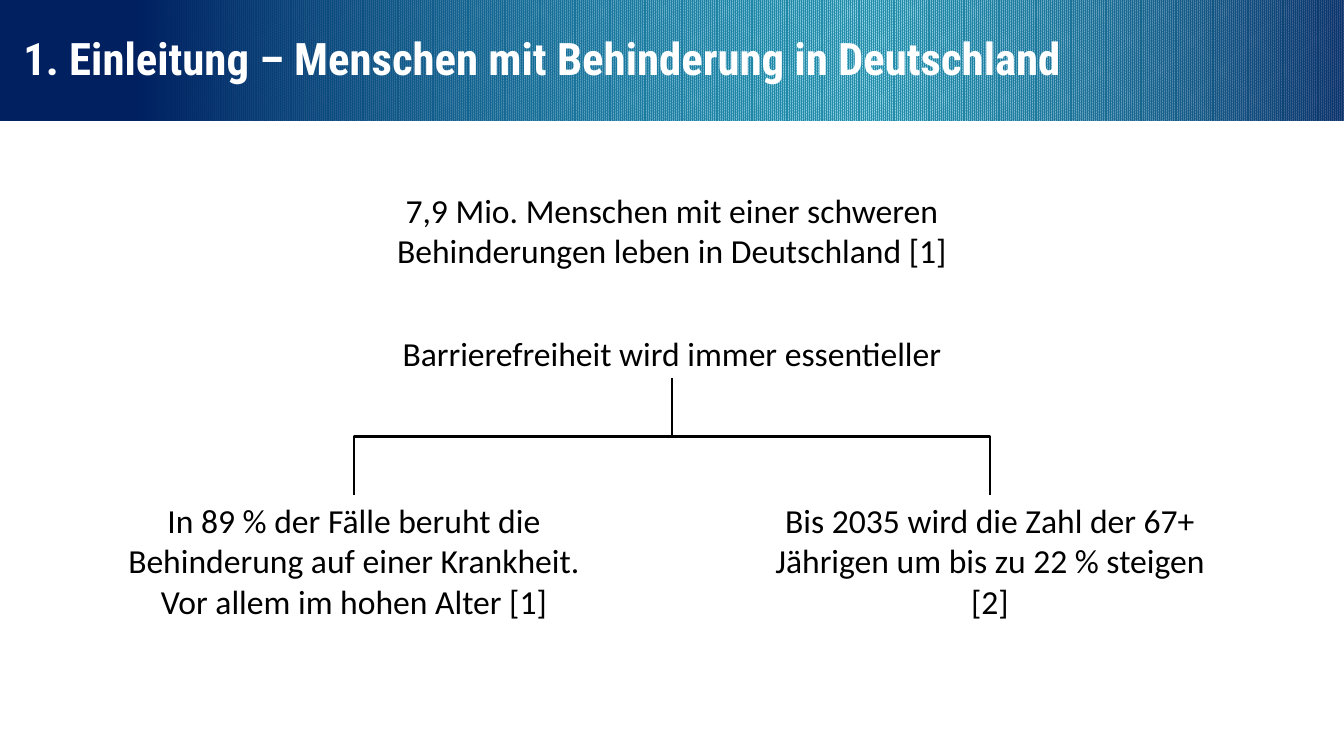
from dataclasses import dataclass

from lxml import etree
from pptx import Presentation
from pptx import util as u
from pptx.dml.color import RGBColor
from pptx.enum import dml, shapes, text
from pptx.oxml.ns import qn

BLACK = RGBColor(0x00, 0x00, 0x00)
WHITE = RGBColor(0xFF, 0xFF, 0xFF)
NAVY = RGBColor(0x00, 0x20, 0x60)
CYAN = RGBColor(0x17, 0xA5, 0xC7)
TEAL = RGBColor(0x2E, 0x7D, 0x96)

WIDTH, HEIGHT = u.Inches(13.33), u.Inches(7.5)
BANNER_HEIGHT = 16
BRANCH_OFFSET = 23.66  # distance of each branch from the slide's centre


@dataclass(frozen=True)
class Statement:
    """A centred text; places and sizes are percentages of the slide."""
    center: float
    top: float
    width: float
    height: float
    lines: tuple[str, ...]


@dataclass(frozen=True)
class Stop:
    position: int
    color: RGBColor
    opacity: int = 100


POPULATION = Statement(50, 24.4, 52.2, 12.13, (
    "7,9 Mio. Menschen mit einer schweren Behinderungen leben in Deutschland [1]",))
CONCLUSION = Statement(50, 43.33, 51.3, 6.73, (
    "Barrierefreiheit wird immer essentieller",))
REASONS = (
    Statement(50 - BRANCH_OFFSET, 65.47, 35.56, 17.47, (
        "In 89 % der Fälle beruht die Behinderung auf einer Krankheit.",
        "Vor allem im hohen Alter [1]")),
    Statement(50 + BRANCH_OFFSET, 65.47, 35.56, 17.47, (
        "Bis 2035 wird die Zahl der 67+ Jährigen um bis zu 22 % steigen [2]",)),
)
BANNER_STOPS = (Stop(10, NAVY), Stop(65, CYAN, 43), Stop(100, NAVY, 77))


def across(share: float) -> int:
    return round(WIDTH * share / 100)


def down(share: float) -> int:
    return round(HEIGHT * share / 100)


def add_span(para, words: str, font: str, size: int, color: RGBColor, bold=False) -> None:
    span = para.add_run()
    span.text = words
    span.font.name = font
    span.font.size = u.Pt(size)
    span.font.color.rgb = color
    span.font.bold = bold


def add_banner_layer(page):
    layer = page.shapes.add_shape(
        shapes.MSO_SHAPE.RECTANGLE, 0, 0, WIDTH, down(BANNER_HEIGHT))
    layer.shadow.inherit = False
    layer.line.fill.background()
    return layer


def set_gradient(shape, stops: tuple[Stop, ...]) -> None:
    shape.fill.gradient()
    shape.fill.gradient_angle = 0
    stop_list = shape.fill._xPr.find(qn("a:gradFill")).find(qn("a:gsLst"))
    for old_stop in list(stop_list):
        stop_list.remove(old_stop)
    for stop in stops:
        entry = etree.SubElement(stop_list, qn("a:gs"), pos=str(stop.position * 1000))
        color = etree.SubElement(entry, qn("a:srgbClr"), val=str(stop.color))
        etree.SubElement(color, qn("a:alpha"), val=str(stop.opacity * 1000))


def add_statement(page, statement: Statement):
    box = page.shapes.add_textbox(
        across(statement.center - statement.width / 2), down(statement.top),
        across(statement.width), down(statement.height))
    frame = box.text_frame
    frame.word_wrap = True
    frame.auto_size = text.MSO_AUTO_SIZE.SHAPE_TO_FIT_TEXT
    for index, line in enumerate(statement.lines):
        para = frame.add_paragraph() if index else frame.paragraphs[0]
        para.alignment = text.PP_ALIGN.CENTER
        add_span(para, line, "Calibri", 24, BLACK)
    return box


def add_branch(page, parent, child) -> None:
    """Join parent's bottom to child's top with an elbow that leaves downwards."""
    start_x, start_y = parent.left + parent.width // 2, parent.top + parent.height
    end_x, end_y = child.left + child.width // 2, child.top
    branch = page.shapes.add_connector(
        shapes.MSO_CONNECTOR.ELBOW, start_x, start_y, end_x, end_y)
    branch.begin_connect(parent, 2)
    branch.end_connect(child, 0)
    branch.line.color.rgb = BLACK
    branch.line.width = u.Pt(2)

    # Turn the elbow so that its outer legs are vertical
    drop, reach = end_y - start_y, abs(end_x - start_x)
    branch.left = (start_x + end_x - drop) // 2
    branch.top = (start_y + end_y - reach) // 2
    branch.width, branch.height = drop, reach
    to_right = end_x > start_x
    properties = branch._element.spPr
    frame = properties.find(qn("a:xfrm"))
    frame.set("rot", str((270 if to_right else 90) * 60000))
    frame.set("flipH", "1" if to_right else "0")
    frame.set("flipV", "0")
    etree.SubElement(properties, qn("a:effectLst"))


def main() -> None:
    deck = Presentation()
    deck.slide_width, deck.slide_height = WIDTH, HEIGHT
    page = deck.slides.add_slide(deck.slide_layouts[5])
    title = page.shapes.title

    # Banner: a dotted pattern under a translucent gradient
    pattern = add_banner_layer(page).fill
    pattern.patterned()
    pattern.pattern = dml.MSO_PATTERN.PERCENT_90
    pattern.fore_color.rgb, pattern.back_color.rgb = TEAL, WHITE
    set_gradient(add_banner_layer(page), BANNER_STOPS)

    # Title, brought in front of the banner
    page.shapes._spTree.append(title._element)
    title.left, title.top = across(0.98), down(-1.6)
    title.width, title.height = across(86.27), down(19.33)
    frame = title.text_frame
    frame.word_wrap = True
    frame.auto_size = text.MSO_AUTO_SIZE.NONE
    frame.vertical_anchor = text.MSO_ANCHOR.MIDDLE
    para = frame.paragraphs[0]
    para.alignment = text.PP_ALIGN.LEFT
    para.line_spacing = 0.9
    add_span(para, "1. Einleitung – Menschen mit Behinderung in Deutschland",
             "Roboto Condensed", 32, WHITE, bold=True)

    # Statements and the tree below the conclusion
    add_statement(page, POPULATION)
    conclusion = add_statement(page, CONCLUSION)
    reasons = [add_statement(page, reason) for reason in REASONS]
    for reason in reasons:
        add_branch(page, conclusion, reason)

    deck.save("out.pptx")


if __name__ == "__main__":
    main()
